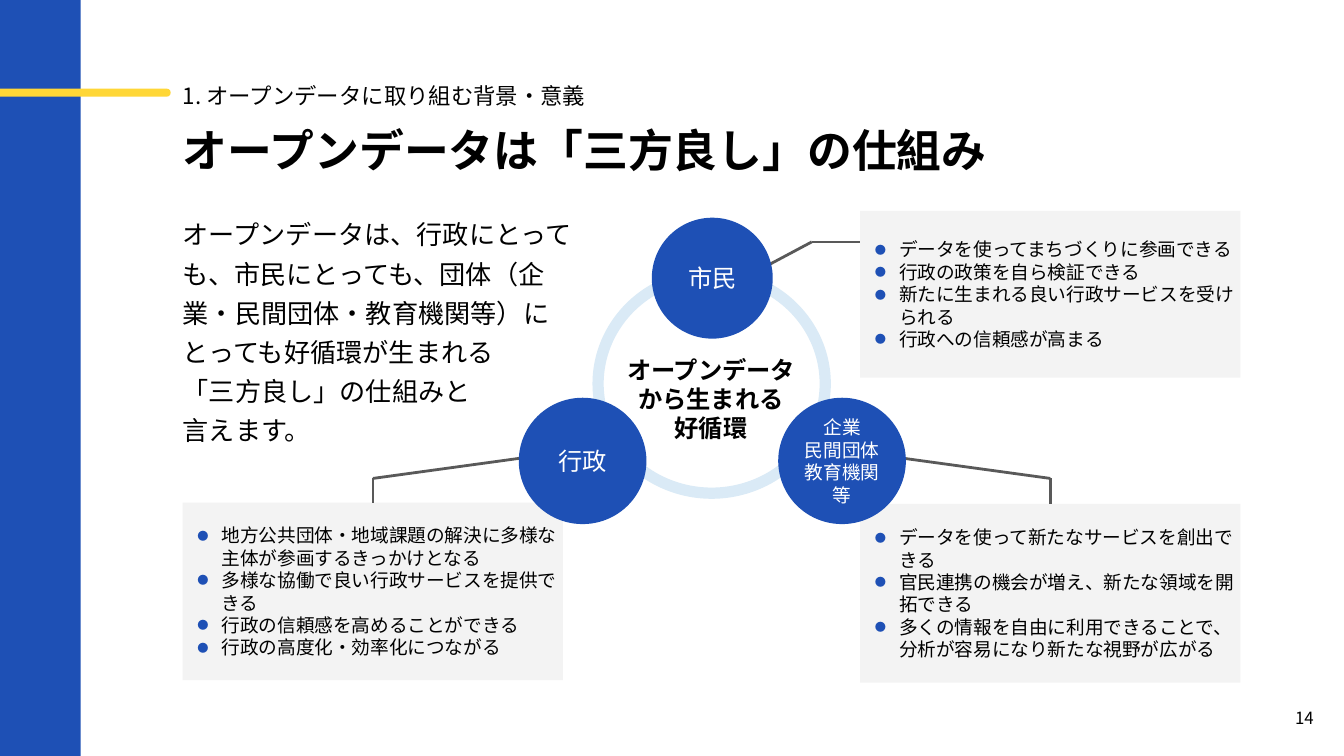
from copy import deepcopy

from lxml import etree
from pptx import Presentation
from pptx import util as u
from pptx.dml.color import RGBColor
from pptx.enum import shapes, text
from pptx.oxml import ns

FONT = "Noto Sans CJK JP"
COLORS = {
    "blue": "1E50B5",
    "yellow": "FFD737",
    "pale_blue": "DAEAF6",
    "panel": "F3F3F3",
    "line": "595959",
    "black": "000000",
    "white": "FFFFFF",
}
SHAPE = shapes.MSO_SHAPE
ALIGN = text.PP_ALIGN
ANCHOR = text.MSO_ANCHOR
SLIDE_WIDTH = 10
SLIDE_HEIGHT = SLIDE_WIDTH * 9 / 16
PANEL_WIDTH = 2.83
LEFT, RIGHT = 1.36, 6.4


def color(name):
    return RGBColor.from_string(COLORS[name])


def sub(parent, tag, **attributes):
    return etree.SubElement(parent, ns.qn(tag), attributes)


def add_bullet(paragraph):
    properties = paragraph._p.get_or_add_pPr()
    properties.set("marL", str(u.Inches(0.28)))
    properties.set("indent", str(u.Inches(-0.18)))
    sub(sub(properties, "a:buClr"), "a:srgbClr", val=COLORS["blue"])
    sub(properties, "a:buSzPct", val="60000")
    sub(properties, "a:buFont", typeface=FONT)
    sub(properties, "a:buChar", char="●")


def write(shape, paragraphs, size=10, fill="black", bold=False, align=ALIGN.LEFT,
          anchor=ANCHOR.MIDDLE, spacing=None, insets=(0, 0, 0, 0), bullets=False):
    """Fill a shape with paragraphs; a newline inside one is a line break."""
    frame = shape.text_frame
    frame.word_wrap = True
    frame.vertical_anchor = anchor
    (frame.margin_left, frame.margin_top,
     frame.margin_right, frame.margin_bottom) = map(u.Inches, insets)
    for index, content in enumerate(paragraphs):
        paragraph = frame.add_paragraph() if index else frame.paragraphs[0]
        paragraph.text = content
        paragraph.alignment = align
        if spacing:
            paragraph.line_spacing = spacing
        if bullets:
            add_bullet(paragraph)
        for run in paragraph.runs:
            run.font.size = u.Pt(size)
            run.font.bold = bold
            run.font.color.rgb = color(fill)
            run.font.name = FONT
            sub(run._r.rPr, "a:ea", typeface=FONT)
        # Line breaks take the format of the text around them
        for line_break in paragraph._p.findall(ns.qn("a:br")):
            line_break.insert(0, deepcopy(paragraph.runs[0]._r.rPr))


def add_text(slide, box, content, **text_format):
    shape = slide.shapes.add_textbox(*map(u.Inches, box))
    write(shape, [content], **text_format)


def add_shape(slide, kind, box, fill=None, outline=None, outline_width=1):
    shape = slide.shapes.add_shape(kind, *map(u.Inches, box))
    shape.shadow.inherit = False
    if fill:
        shape.fill.solid()
        shape.fill.fore_color.rgb = color(fill)
    else:
        shape.fill.background()
    if outline:
        shape.line.color.rgb = color(outline)
        shape.line.width = u.Pt(outline_width)
    else:
        shape.line.fill.background()
    return shape


def add_panel(slide, left, top, height, items):
    panel = add_shape(slide, SHAPE.RECTANGLE, (left, top, PANEL_WIDTH, height), "panel")
    write(panel, items, bullets=True, insets=(0.01, 0.02, 0.04, 0.02))
    return panel


def add_circle(slide, box, paragraphs, size=13):
    circle = add_shape(slide, SHAPE.OVAL, box, "blue")
    write(circle, paragraphs, size=size, fill="white", align=ALIGN.CENTER)


def add_leader(slide, points, panel=None):
    """Draw a bent leader line, joined to the top of a panel if one is given."""
    for start, end in zip(points, points[1:]):
        connector = slide.shapes.add_connector(
            shapes.MSO_CONNECTOR.STRAIGHT, *map(u.Inches, start + end))
        connector.line.color.rgb = color("line")
        connector.line.width = u.Pt(1.5)
        sub(connector._element.spPr, "a:effectLst")
    if panel is not None:
        connector.end_connect(panel, 0)


def main():
    presentation = Presentation()
    presentation.slide_width = u.Inches(SLIDE_WIDTH)
    presentation.slide_height = u.Inches(SLIDE_HEIGHT)
    slide = presentation.slides.add_slide(presentation.slide_layouts[6])

    # Side band and accent bar
    add_shape(slide, SHAPE.RECTANGLE, (0, 0, 0.6, SLIDE_HEIGHT), "blue")
    accent = add_shape(slide, SHAPE.ROUNDED_RECTANGLE, (-0.11, 0.66, 1.38, 0.06), "yellow")
    accent.adjustments[0] = 0.5

    # Headings, introduction and page number
    add_text(slide, (LEFT, 0.55, 7.87, 0.27), "1. オープンデータに取り組む背景・意義",
             size=12, spacing=1.25)
    add_text(slide, (LEFT, 0.91, 7.87, 0.4), "オープンデータは「三方良し」の仕組み",
             size=24, bold=True, anchor=ANCHOR.TOP)
    add_text(slide, (LEFT, 1.57, 2.97, 1.77),
             "オープンデータは、行政にとっても、市民にとっても、団体（企業・民間団体・"
             "教育機関等）にとっても好循環が生まれる\n「三方良し」の仕組みと\n言えます。",
             size=14, spacing=1.25, anchor=ANCHOR.TOP)
    add_text(slide, (9.49, 5.13, 0.43, 0.43), "14", size=9, align=ALIGN.CENTER)

    # Benefit panels
    government = add_panel(slide, LEFT, 3.74, 1.32, [
        "地方公共団体・地域課題の解決に多様な主体が参画するきっかけとなる",
        "多様な協働で良い行政サービスを提供できる",
        "行政の信頼感を高めることができる",
        "行政の高度化・効率化につながる",
    ])
    business = add_panel(slide, RIGHT, 3.75, 1.33, [
        "データを使って新たなサービスを創出できる",
        "官民連携の機会が増え、新たな領域を開拓できる",
        "多くの情報を自由に利用できることで、分析が容易になり新たな視野が広がる",
    ])
    add_panel(slide, RIGHT, 1.57, 1.24, [
        "データを使ってまちづくりに参画できる",
        "行政の政策を自ら検証できる",
        "新たに生まれる良い行政サービスを受けられる",
        "行政への信頼感が高まる",
    ])

    # Leader lines from circles to panels
    left_middle, right_middle = (left + PANEL_WIDTH / 2 for left in (LEFT, RIGHT))
    add_leader(slide, [(3.94, 3.4), (left_middle, 3.56), (left_middle, 3.74)], government)
    add_leader(slide, [(6.65, 3.4), (right_middle, 3.56), (right_middle, 3.75)], business)
    add_leader(slide, [(5.59, 2.04), (6.04, 1.8), (6.4, 1.8)])

    # Cycle ring with its three parties
    add_shape(slide, SHAPE.OVAL, (4.45, 2.04, 1.69, 1.63),
              outline="pale_blue", outline_width=6)
    add_text(slide, (4.6, 2.64, 1.38, 0.66), "オープンデータから生まれる\n好循環",
             size=13, bold=True, align=ALIGN.CENTER, anchor=ANCHOR.TOP)
    add_circle(slide, (4.85, 1.62, 0.9, 0.9), ["市民"])
    add_circle(slide, (3.86, 2.96, 0.95, 0.94), ["行政"])
    add_circle(slide, (5.79, 2.96, 0.95, 0.94), ["企業\n民間団体", "教育機関等"], size=10)

    presentation.save("out.pptx")


if __name__ == "__main__":
    main()
